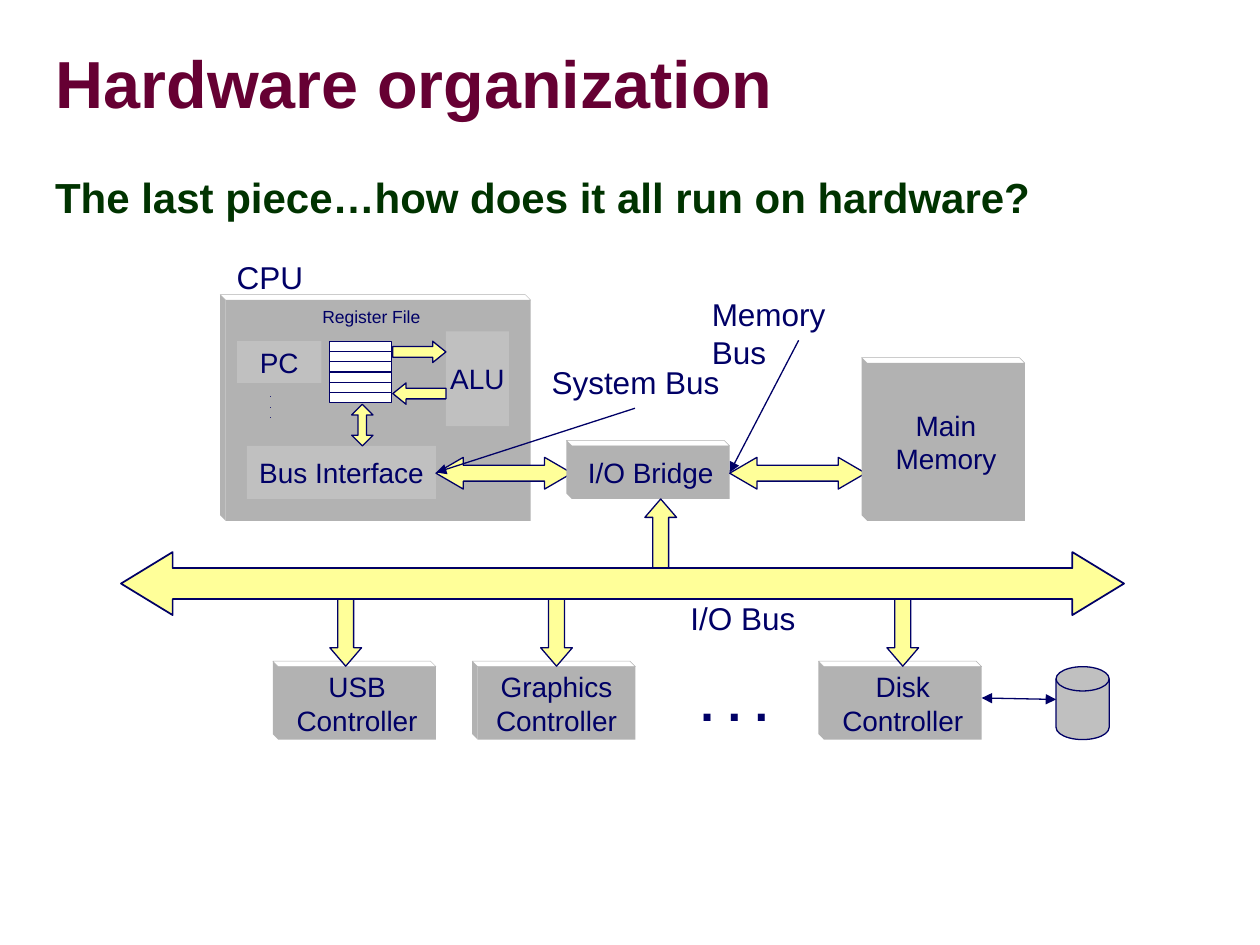
import pptx
import pptx.util
import pptx.dml.color
import pptx.enum.shapes
import pptx.enum.text
import pptx.oxml
import pptx.oxml.ns

Cm, Pt = pptx.util.Cm, pptx.util.Pt
RGBColor = pptx.dml.color.RGBColor
SHAPE = pptx.enum.shapes.MSO_SHAPE
STRAIGHT = pptx.enum.shapes.MSO_CONNECTOR.STRAIGHT
ALIGN = pptx.enum.text.PP_ALIGN
ANCHOR = pptx.enum.text.MSO_ANCHOR

NAVY = RGBColor(0x00, 0x00, 0x66)
MAROON = RGBColor(0x66, 0x00, 0x33)
GREEN = RGBColor(0x00, 0x33, 0x00)
YELLOW = RGBColor(0xFF, 0xFF, 0x99)
SILVER = RGBColor(0xC0, 0xC0, 0xC0)
GREY = RGBColor(0xB2, 0xB2, 0xB2)
WHITE = RGBColor(0xFF, 0xFF, 0xFF)


class Diagram:
    """Style and current slide; all lengths are in centimetres."""

    font_name = "Arial"
    line_width = 0.75
    depth = 0.11

    def __init__(self, slide):
        self.slide = slide

    def paint(self, shape, fill, line=None, width=line_width):
        shape.shadow.inherit = False
        shape.fill.solid()
        shape.fill.fore_color.rgb = fill
        if line is None:
            shape.line.fill.background()
        else:
            shape.line.color.rgb = line
            shape.line.width = Pt(width)

    def set_text(self, shape, text, size, color=NAVY, bold=False, frame_format=None,
                 **paragraph_format):
        frame = shape.text_frame
        for name, value in (frame_format or {}).items():
            setattr(frame, name, value)
        frame.text = text
        font_format = {"name": self.font_name, "size": Pt(size), "bold": bold}
        for paragraph in frame.paragraphs:
            for name, value in paragraph_format.items():
                setattr(paragraph, name, value)
            for run in paragraph.runs:
                for name, value in font_format.items():
                    setattr(run.font, name, value)
                run.font.color.rgb = color

    def shape(self, kind, left, top, width, height, fill, line=None,
              adjustments=(), line_width=line_width):
        shape = self.slide.shapes.add_shape(
            kind, Cm(left), Cm(top), Cm(width), Cm(height))
        for index, value in enumerate(adjustments):
            shape.adjustments[index] = value
        self.paint(shape, fill, line, line_width)
        return shape

    def arrow(self, kind, left, top, width, height, head, shaft=0.5, line_width=line_width):
        return self.shape(kind, left, top, width, height, YELLOW, NAVY,
                          (shaft, head), line_width)

    def box(self, left, top, width, height, text="", fill=SILVER):
        shape = self.shape(SHAPE.RECTANGLE, left, top, width, height, fill)
        if text:
            self.set_text(shape, text, 16, alignment=ALIGN.CENTER,
                          frame_format={"word_wrap": False, "vertical_anchor": ANCHOR.MIDDLE})
        return shape

    def face(self, points, fill, line=None):
        points = [(Cm(x), Cm(y)) for x, y in points]
        builder = self.slide.shapes.build_freeform(*points[0])
        builder.add_line_segments(points[1:], close=True)
        self.paint(builder.convert_to_shape(), fill, line, 0.25)

    def block(self, left, top, width, height, text=""):
        """A box with a raised top and left side."""
        right, bottom, depth = left + width, top + height, self.depth
        self.face([(left, top), (left - depth, top - depth),
                   (left - depth, bottom - depth), (left, bottom)], GREY)
        self.face([(left, top), (left - depth, top - depth),
                   (right - depth, top - depth), (right, top)], WHITE, GREY)
        return self.box(left, top, width, height, text, GREY)

    def label(self, text, left, top, width, height, size=18, wrap=False, **style):
        shape = self.slide.shapes.add_textbox(Cm(left), Cm(top), Cm(width), Cm(height))
        frame_format = {"word_wrap": wrap, **style.pop("frame_format", {})}
        self.set_text(shape, text, size, frame_format=frame_format, **style)
        return shape

    def line(self, start, end, heads=(), target=None):
        """A straight line; a target box is joined at its right side."""
        connector = self.slide.shapes.add_connector(
            STRAIGHT, *(Cm(value) for value in (*start, *end)))
        connector.line.color.rgb = NAVY
        connector.line.width = Pt(self.line_width)
        if target is not None:
            connector.end_connect(target, 3)
        outline = connector.line._get_or_add_ln()
        for head in heads:
            element = pptx.oxml.ns.qn("a:" + head)
            outline.append(outline.makeelement(element, {"type": "triangle"}))
        properties = connector._element.spPr
        properties.append(properties.makeelement(pptx.oxml.ns.qn("a:effectLst"), {}))
        return connector


def main():
    presentation = pptx.Presentation()
    presentation.slide_width, presentation.slide_height = Cm(25.4), Cm(19.05)
    slide = presentation.slides.add_slide(presentation.slide_layouts[6])
    diagram = Diagram(slide)

    # Title and statement
    no_margins = {"margin_" + side: 0 for side in ("left", "top", "right", "bottom")}
    diagram.label("Hardware organization", 1.12, 0.69, 24.21, 2.16, 38, wrap=True,
                  color=MAROON, bold=True, line_spacing=0.87,
                  frame_format={**no_margins, "vertical_anchor": ANCHOR.MIDDLE})
    statement = diagram.label("The last piece…how does it all run on hardware?",
                              0.81, 3.4, 23.09, 14.5, 24, wrap=True, color=GREEN,
                              bold=True, line_spacing=0.95, space_before=Pt(15))
    indent = statement.text_frame.paragraphs[0]._p.get_or_add_pPr()
    indent.set("marL", str(Cm(1.07)))
    indent.set("indent", str(Cm(-1.02)))

    # Controllers, with the offset of each arrow from its box
    controllers = [("USB", 5.61, 1.04), ("Graphics", 9.63, 1.27), ("Disk", 16.61, 1.27)]
    for name, left, offset in controllers:
        diagram.block(left, 13.44, 3.18, 1.47, name + "\nController")
        diagram.arrow(SHAPE.DOWN_ARROW, left + offset, 11.96, 0.64, 1.47, 0.58)
    diagram.label(". . .", 13.87, 13.44, 1.88, 1.45, 28, bold=True)

    # CPU
    diagram.block(4.55, 6.05, 6.15, 4.45)
    diagram.label("CPU", 4.52, 5.08, 1.85, 1.02)
    bus_interface = diagram.box(4.98, 8.99, 3.81, 1.07, "Bus Interface")
    diagram.box(8.99, 6.68, 1.27, 1.91, "ALU")
    diagram.box(4.78, 6.88, 1.7, 0.84, "PC")
    diagram.label(".\n.\n.", 5.18, 7.72, 0.64, 0.89, 5, wrap=True)

    # Register file
    left, top, side, rows = 6.65, 6.88, 1.24, 6
    diagram.label("Register File", 6.25, 6.05, 2.49, 0.69, 10)
    diagram.shape(SHAPE.RECTANGLE, left, top, side, side, WHITE, NAVY)
    for row in range(1, rows):
        y = top + row * side / rows
        diagram.line((left, y), (left + side, y))
    diagram.arrow(SHAPE.RIGHT_ARROW, 7.92, 6.88, 1.07, 0.43, 0.62)
    diagram.arrow(SHAPE.LEFT_ARROW, 7.92, 7.72, 1.07, 0.43, 0.62)
    diagram.arrow(SHAPE.UP_DOWN_ARROW, 7.09, 8.15, 0.43, 0.84, 0.4)

    # Bridge and memory
    diagram.arrow(SHAPE.LEFT_RIGHT_ARROW, 8.79, 9.22, 2.74, 0.64, 0.86)
    bridge = diagram.block(11.53, 8.99, 3.18, 1.07, "I/O Bridge")
    diagram.arrow(SHAPE.LEFT_RIGHT_ARROW, 14.71, 9.22, 2.74, 0.64, 0.86)
    diagram.block(17.48, 7.32, 3.18, 3.18, "Main\nMemory")
    diagram.arrow(SHAPE.UP_ARROW, 13, 10.06, 0.64, 1.47, 0.58)

    # I/O bus
    diagram.arrow(SHAPE.LEFT_RIGHT_ARROW, 2.44, 11.13, 20.22, 1.27, 0.82, 0.49, 1)
    diagram.label("I/O Bus", 13.67, 11.96, 2.62, 1.02)

    # Disk
    diagram.shape(SHAPE.FLOWCHART_MAGNETIC_DISK, 21.29, 13.44, 1.07, 1.47, SILVER, NAVY)
    diagram.line((19.79, 14.07), (21.29, 14.1), ("headEnd", "tailEnd"))

    # Bus names and their pointers
    diagram.label("Memory Bus", 14.1, 5.82, 3.9, 1.02, wrap=True)
    diagram.label("System Bus", 10.87, 7.19, 3.89, 1.02)
    diagram.line((12.8, 8.23), (8.79, 9.52), ("tailEnd",), bus_interface)
    diagram.line((16.1, 6.86), (14.71, 9.52), ("tailEnd",), bridge)

    presentation.save("out.pptx")


if __name__ == "__main__":
    main()
